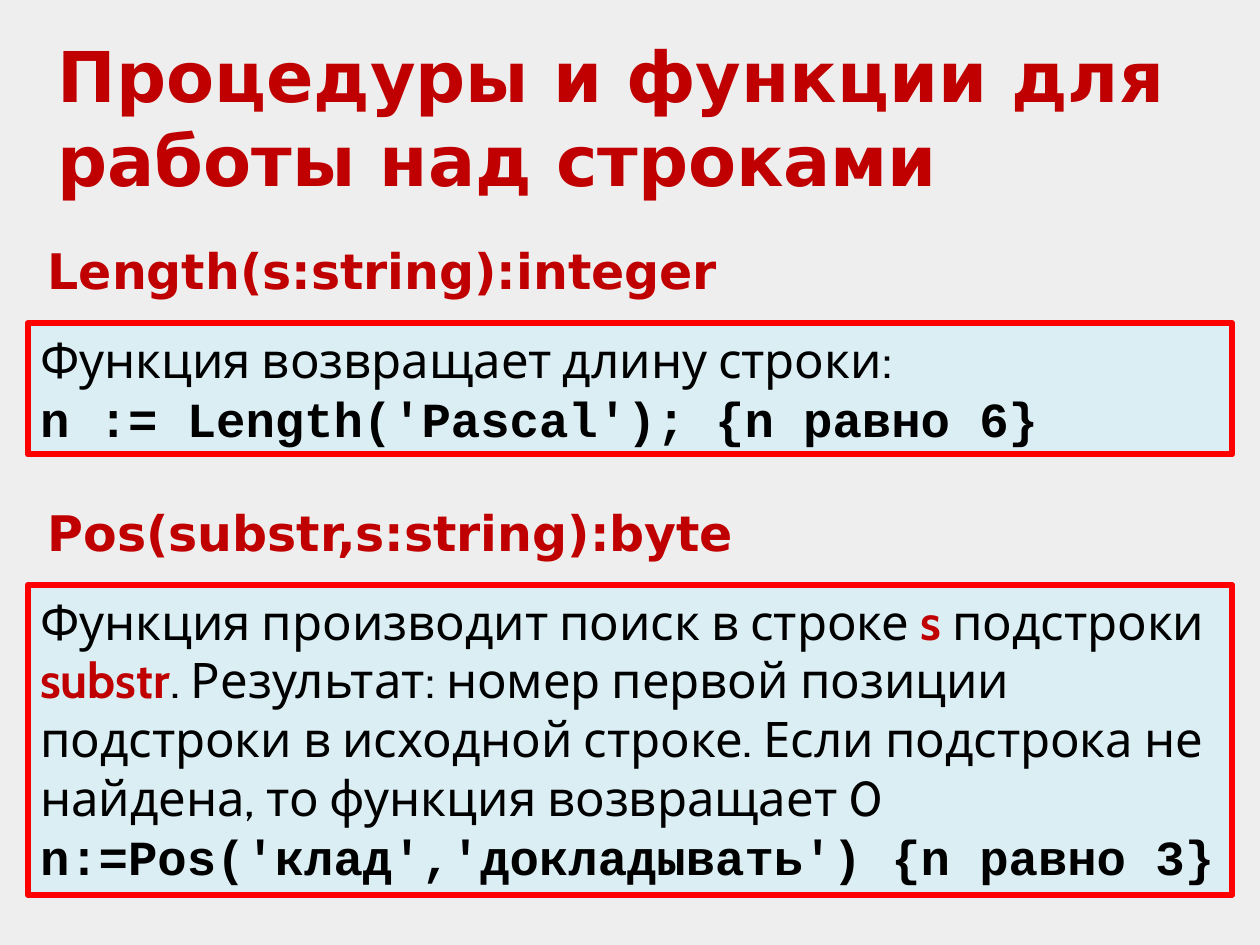
from dataclasses import dataclass

from pptx import Presentation
from pptx.dml.color import RGBColor
from pptx.enum.shapes import MSO_SHAPE
from pptx.enum.text import MSO_ANCHOR, PP_ALIGN
from pptx.util import Inches, Pt


@dataclass(frozen=True)
class Theme:
    back: str = "EEEEEE"
    panel: str = "DBEEF4"
    edge: str = "FF0000"
    accent: str = "C00000"
    ink: str = "000000"
    title: int = 40
    body: int = 28
    line: float = 3.5


THEME = Theme()
WIDTH, HEIGHT = 10, 7.5
HEAD_LEFT, HEAD_WIDE = 2.8, 92.8
PANEL_LEFT, PANEL_WIDE = 2.2, 95.6
HEAD_HIGH, PANEL_DROP = 7.6, 9.4

HEAD = {"name": "DejaVu Sans", "bold": True, "color": THEME.accent}
PLAIN = {"name": "Cabin", "bold": False, "color": THEME.ink}
TERM = PLAIN | {"bold": True, "color": THEME.accent}
CODE = {"name": "Courier New", "bold": True, "color": THEME.ink}

SECTIONS = [
    (24.8, 13.9, "Length(s:string):integer", [
        [("Функция возвращает длину строки:", PLAIN)],
        [("n := Length('Pascal'); {n равно 6}", CODE)],
    ]),
    (52.5, 32.8, "Pos(substr,s:string):byte", [
        [("Функция производит поиск в строке ", PLAIN), ("s", TERM),
         (" подстроки ", PLAIN), ("substr", TERM),
         (". Результат: номер первой позиции подстроки в исходной строке. "
          "Если подстрока не найдена, то функция возвращает 0", PLAIN)],
        [("n:=Pos('клад','докладывать') {n равно 3}", CODE)],
    ]),
]


def place(left, top, wide, high):
    return [Inches(share * side / 100) for share, side in
            zip((left, top, wide, high), (WIDTH, HEIGHT, WIDTH, HEIGHT))]


def style(font, look, size):
    for key, value in look.items():
        if key == "color":
            font.color.rgb = RGBColor.from_string(value)
        else:
            setattr(font, key, value)
    font.size = Pt(size)


def write(shape, lines, size):
    frame = shape.text_frame
    frame.word_wrap = True
    frame.vertical_anchor = MSO_ANCHOR.TOP
    for index, line in enumerate(lines):
        para = frame.add_paragraph() if index else frame.paragraphs[0]
        para.alignment = PP_ALIGN.LEFT
        for text, look in line:
            run = para.add_run()
            run.text = text
            style(run.font, look, size)


def heading(slide, text, spot, size):
    write(slide.shapes.add_textbox(*place(*spot)), [[(text, HEAD)]], size)


def panel(slide, lines, spot):
    box = slide.shapes.add_shape(MSO_SHAPE.RECTANGLE, *place(*spot))
    box.shadow.inherit = False
    box.fill.solid()
    box.fill.fore_color.rgb = RGBColor.from_string(THEME.panel)
    box.line.color.rgb = RGBColor.from_string(THEME.edge)
    box.line.width = Pt(THEME.line)
    write(box, lines, THEME.body)


def main():
    deck = Presentation()
    deck.slide_width, deck.slide_height = Inches(WIDTH), Inches(HEIGHT)
    slide = deck.slides.add_slide(deck.slide_layouts[6])
    fill = slide.background.fill
    fill.solid()
    fill.fore_color.rgb = RGBColor.from_string(THEME.back)

    heading(slide, "Процедуры и функции для работы над строками",
            (3.6, 2.8, HEAD_WIDE, 19.3), THEME.title)
    for top, high, name, lines in SECTIONS:
        heading(slide, name, (HEAD_LEFT, top, HEAD_WIDE, HEAD_HIGH), THEME.body)
        panel(slide, lines, (PANEL_LEFT, top + PANEL_DROP, PANEL_WIDE, high))
    deck.save("out.pptx")


if __name__ == "__main__":
    main()
